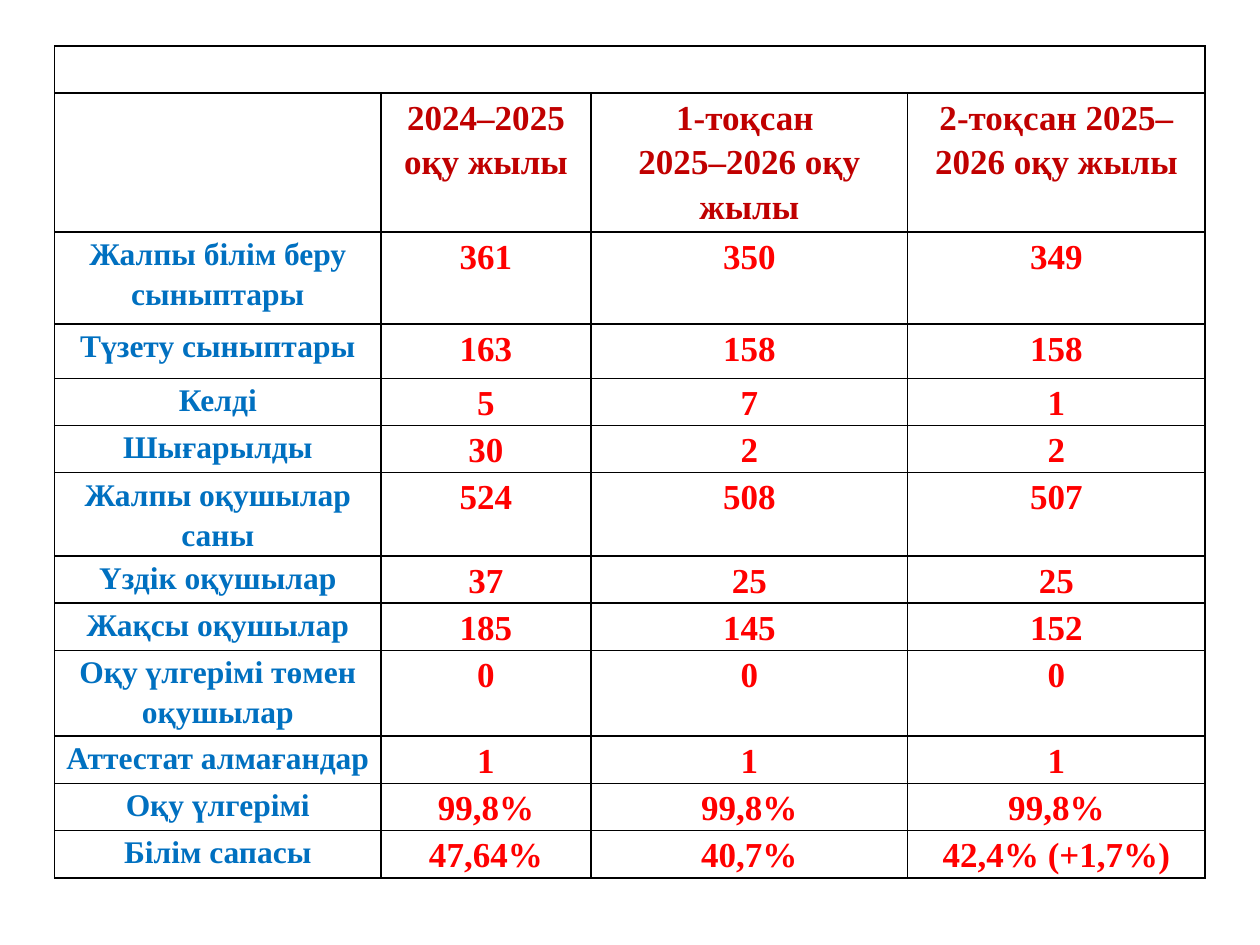
from dataclasses import dataclass

from lxml import etree
from pptx import Presentation
from pptx.dml.color import RGBColor
from pptx.enum import text
from pptx.oxml.ns import qn
from pptx.util import Pt


@dataclass(frozen=True)
class Theme:
    font: str = "Times New Roman"
    header: str = "C00000"
    label: str = "0070C0"
    value: str = "FF0000"
    border: str = "000000"
    label_size: float = 18
    value_size: float = 20
    border_width: float = 1
    line_spacing: float = 1.15
    side_margin: float = 5


THEME = Theme()

COLUMN_WIDTHS = [186.5, 120, 181, 170]
HEADERS = ["", "2024–2025 оқу жылы", "1-тоқсан \n2025–2026 оқу жылы",
           "2-тоқсан 2025–2026 оқу жылы"]
LINE_HEIGHT = 27  # a row with one line of text
BANNER_HEIGHT, HEADER_HEIGHT = LINE_HEIGHT, 79.4

# Row height, label, then one value for each period
RESULTS = [
    (52.6, "Жалпы білім беру сыныптары", "361", "350", "349"),
    (31, "Түзету сыныптары", "163", "158", "158"),
    (LINE_HEIGHT, "Келді", "5", "7", "1"),
    (LINE_HEIGHT, "Шығарылды", "30", "2", "2"),
    (47.6, "Жалпы оқушылар саны", "524", "508", "507"),
    (LINE_HEIGHT, "Үздік оқушылар", "37", "25", "25"),
    (LINE_HEIGHT, "Жақсы оқушылар", "185", "145", "152"),
    (49, "Оқу үлгерімі төмен оқушылар", "0", "0", "0"),
    (LINE_HEIGHT, "Аттестат алмағандар", "1", "1", "1"),
    (LINE_HEIGHT, "Оқу үлгерімі", "99,8%", "99,8%", "99,8%"),
    (LINE_HEIGHT, "Білім сапасы", "47,64%", "40,7%", "42,4% (+1,7%)"),
]


def write(tf, content, *, size, color, bold=True):
    """Fill a text frame with centred paragraphs, one for each line."""
    for i, line in enumerate(content.split("\n")):
        p = tf.add_paragraph() if i else tf.paragraphs[0]
        p.alignment = text.PP_ALIGN.CENTER
        p.line_spacing = THEME.line_spacing
        r = p.add_run()
        r.text = line
        r.font.name = THEME.font
        r.font.size = Pt(size)
        r.font.bold = bold
        r.font.color.rgb = RGBColor.from_string(color)


def format_cell(cell):
    """Set margins, a solid border on each side and no fill."""
    cell.margin_left = cell.margin_right = Pt(THEME.side_margin)
    cell.margin_top = cell.margin_bottom = 0
    tc_pr = cell._tc.get_or_add_tcPr()
    for side in ("a:lnL", "a:lnR", "a:lnT", "a:lnB"):
        ln = etree.SubElement(tc_pr, qn(side), w=str(Pt(THEME.border_width)))
        fill = etree.SubElement(ln, qn("a:solidFill"))
        etree.SubElement(fill, qn("a:srgbClr"), val=THEME.border)
    cell.fill.background()


def add_results_table(slide, left, top, width):
    heights = [BANNER_HEIGHT, HEADER_HEIGHT] + [row[0] for row in RESULTS]
    table = slide.shapes.add_table(
        len(heights), len(COLUMN_WIDTHS), Pt(left), Pt(top),
        Pt(width), Pt(sum(heights))).table
    table.first_row = table.horz_banding = False

    scale = width / sum(COLUMN_WIDTHS)
    for column, column_width in zip(table.columns, COLUMN_WIDTHS):
        column.width = Pt(column_width * scale)
    for row, height in zip(table.rows, heights):
        row.height = Pt(height)
    for cell in table.iter_cells():
        format_cell(cell)

    # Empty banner across the top
    table.cell(0, 0).merge(table.cell(0, len(COLUMN_WIDTHS) - 1))

    # Period headings
    for c, heading in enumerate(HEADERS):
        if heading:
            write(table.cell(1, c).text_frame, heading,
                  size=THEME.value_size, color=THEME.header)

    # Labels and values
    for r, (_, label, *values) in enumerate(RESULTS, start=2):
        write(table.cell(r, 0).text_frame, label,
              size=THEME.label_size, color=THEME.label)
        for c, value in enumerate(values, start=1):
            write(table.cell(r, c).text_frame, value,
                  size=THEME.value_size, color=THEME.value)


def main():
    prs = Presentation()
    prs.slide_width, prs.slide_height = Pt(720), Pt(540)
    s = prs.slides.add_slide(prs.slide_layouts[6])
    add_results_table(s, left=31.2, top=26.2, width=657.5)
    prs.save("out.pptx")


if __name__ == "__main__":
    main()
